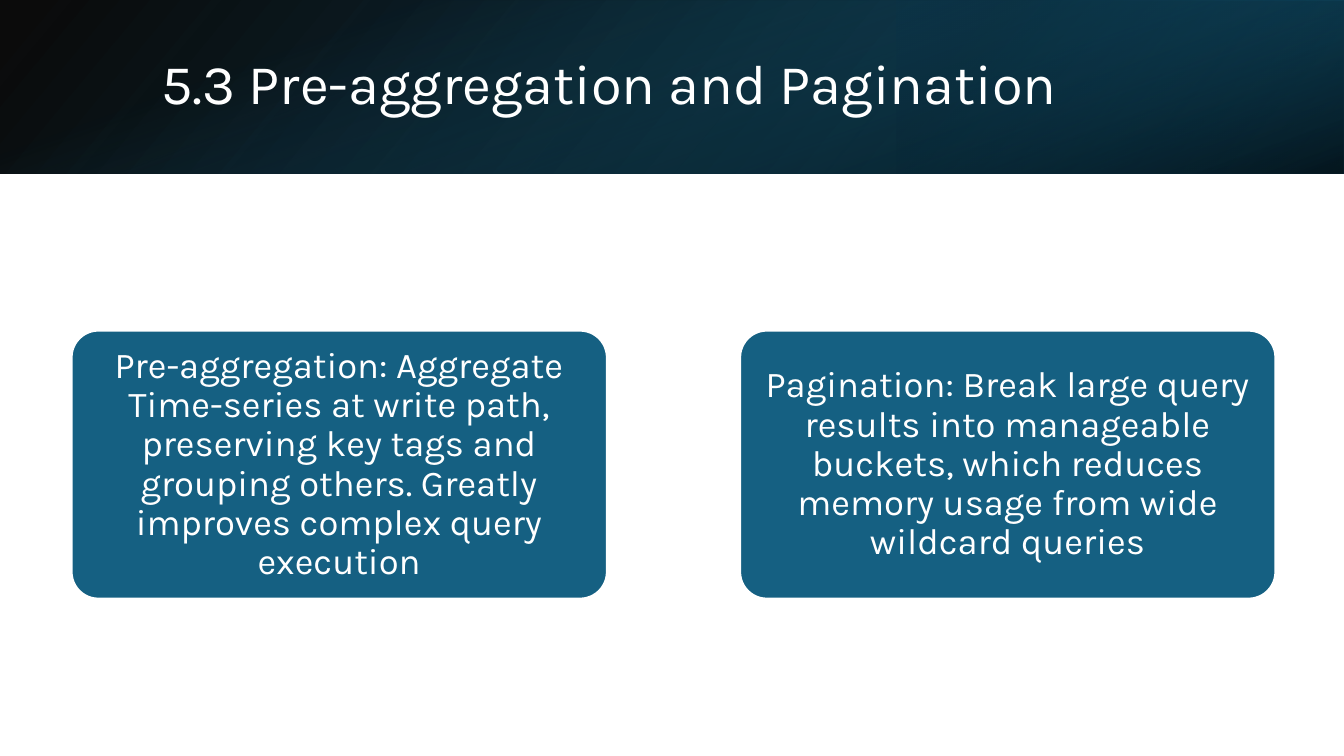
import pptx
import pptx.dml.color
import pptx.enum.shapes
import pptx.enum.text
import pptx.oxml
import pptx.oxml.ns
import pptx.util

Inches = pptx.util.Inches
SHAPES = pptx.enum.shapes.MSO_SHAPE
ALIGN = pptx.enum.text.PP_ALIGN

# Content
TITLE = "5.3 Pre-aggregation and Pagination"
CARDS = [
    "Pre-aggregation: Aggregate Time-series at write path, preserving key tags "
    "and grouping others. Greatly improves complex query execution",
    "Pagination: Break large query results into manageable buckets, which "
    "reduces memory usage from wide wildcard queries",
]
COLORS = {"black": "000000", "navy": "0B3041", "deep": "104862",
          "teal": "156082", "white": "FFFFFF"}
FONT = "Karla"

# Header layers: box, rotation, flipped, gradient angle, stops (position, color, opacity)
SLIDE_WIDTH, SLIDE_HEIGHT, HEADER_HEIGHT = 13.33, 7.5, 1.72
HEADER_LAYERS = [
    ((0, 0, SLIDE_WIDTH, HEADER_HEIGHT), 0, True, 140,
     [(0, "black", 96), (100, "deep", 100)]),
    ((8.89, 0, 4.44, HEADER_HEIGHT), 180, True, 320,
     [(19, "navy", 68), (100, "teal", 79)]),
    ((5.8, -5.8, HEADER_HEIGHT, SLIDE_WIDTH), 90, False, 340,
     [(23, "teal", 0), (99, "black", 74)]),
]
CARD_LEFT, CARD_TOP, CARD_WIDTH, CARD_HEIGHT, CARD_STEP = 0.71, 3.28, 5.31, 2.66, 6.63


def rgb(name):
    return pptx.dml.color.RGBColor.from_string(COLORS[name])


def apply_gradient(shape, angle, stops):
    stop_xml = "".join(
        f'<a:gs pos="{position * 1000}"><a:srgbClr val="{COLORS[color]}">'
        f'<a:alpha val="{opacity * 1000}"/></a:srgbClr></a:gs>'
        for position, color, opacity in stops)
    gradient = pptx.oxml.parse_xml(
        f'<a:gradFill {pptx.oxml.ns.nsdecls("a")} rotWithShape="1">'
        f'<a:gsLst>{stop_xml}</a:gsLst>'
        f'<a:lin ang="{angle * 60000}" scaled="0"/></a:gradFill>')
    geometry = shape.element.spPr.find(pptx.oxml.ns.qn("a:prstGeom"))
    geometry.addnext(gradient)


def write_text(shape, text, size, alignment, margins):
    frame = shape.text_frame
    frame_format = {
        "word_wrap": True,
        "vertical_anchor": pptx.enum.text.MSO_ANCHOR.MIDDLE,
        "margin_left": Inches(margins[0]), "margin_right": Inches(margins[0]),
        "margin_top": Inches(margins[1]), "margin_bottom": Inches(margins[1]),
    }
    for name, value in frame_format.items():
        setattr(frame, name, value)
    paragraph = frame.paragraphs[0]
    paragraph.alignment = alignment
    paragraph.line_spacing = 0.9
    run = paragraph.add_run()
    run.text = text
    for name, value in {"name": FONT, "size": pptx.util.Pt(size)}.items():
        setattr(run.font, name, value)
    run.font.color.rgb = rgb("white")


def main():
    presentation = pptx.Presentation()
    presentation.slide_width = Inches(SLIDE_WIDTH)
    presentation.slide_height = Inches(SLIDE_HEIGHT)
    slide = presentation.slides.add_slide(presentation.slide_layouts[6])

    # Header band
    for box, rotation, flipped, angle, stops in HEADER_LAYERS:
        layer = slide.shapes.add_shape(SHAPES.RECTANGLE, *map(Inches, box))
        layer.shadow.inherit = False
        layer.line.fill.background()
        layer.rotation = rotation
        if flipped:
            layer.element.spPr.xfrm.set("flipH", "1")
        apply_gradient(layer, angle, stops)

    # Title
    title = slide.shapes.add_textbox(*map(Inches, (1.5, 0.38, 10.98, 0.96)))
    write_text(title, TITLE, 40, ALIGN.LEFT, (0.1, 0.05))

    # Cards
    for index, text in enumerate(CARDS):
        box = (CARD_LEFT + index * CARD_STEP, CARD_TOP, CARD_WIDTH, CARD_HEIGHT)
        card = slide.shapes.add_shape(SHAPES.ROUNDED_RECTANGLE, *map(Inches, box))
        card.adjustments[0] = 0.1
        card.shadow.inherit = False
        card.fill.solid()
        card.fill.fore_color.rgb = rgb("teal")
        card.line.color.rgb = rgb("white")
        card.line.width = pptx.util.Pt(1.5)
        write_text(card, text, 26, ALIGN.CENTER, (0.05, 0.04))

    presentation.save("out.pptx")


if __name__ == "__main__":
    main()
